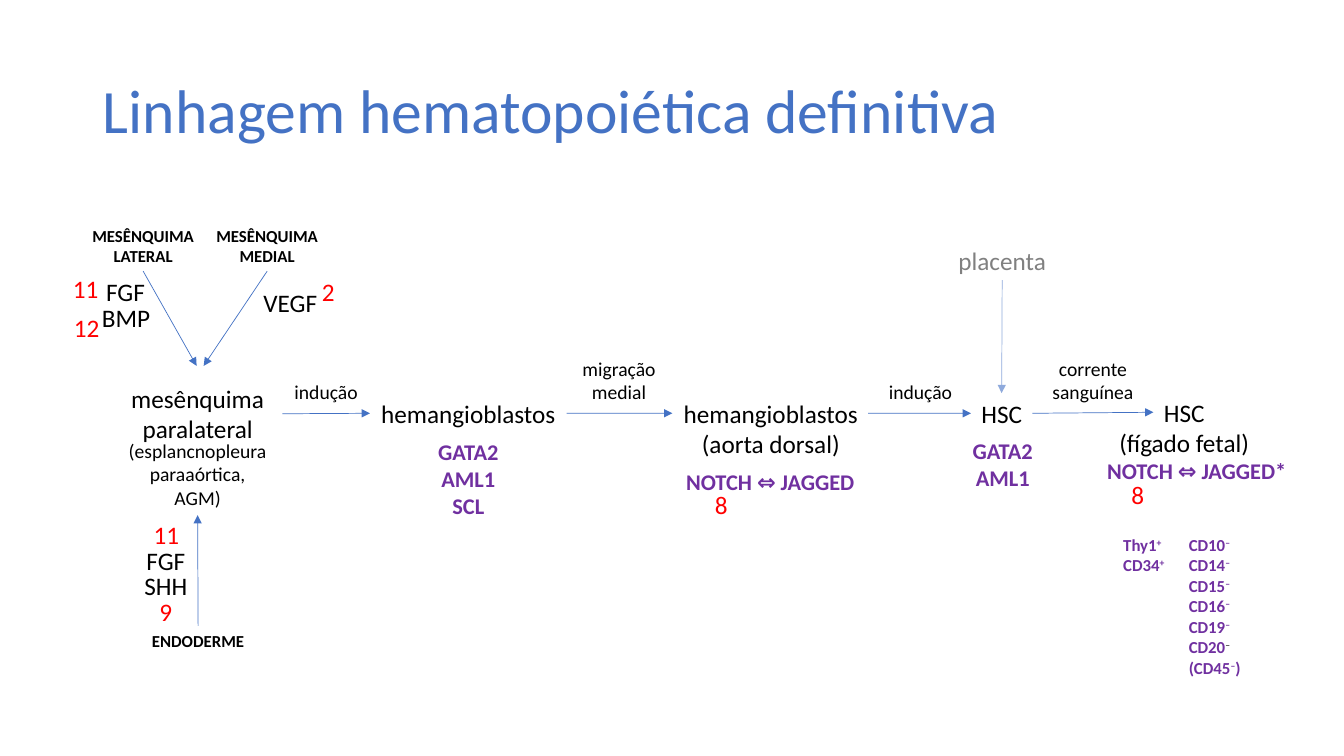
import dataclasses

import lxml.etree
import pptx
import pptx.dml.color
import pptx.enum.shapes
import pptx.enum.text
import pptx.oxml.ns
import pptx.util

Inches = pptx.util.Inches
ALIGN = pptx.enum.text.PP_ALIGN
TOP, LEFT, BOTTOM, RIGHT = range(4)


@dataclasses.dataclass(frozen=True)
class Theme:
    """Font, colours and type sizes of the slide."""
    font: str = "Calibri"
    accent: str = "4472C4"
    pale: str = "8FAADC"
    ink: str = "000000"
    muted: str = "808080"
    gene: str = "7030A0"
    number: str = "FF0000"
    title: int = 44
    body: int = 18
    factor: int = 16
    note: int = 14
    small: int = 12


THEME = Theme()


def rgb(color):
    """Turn a hex string into a colour."""
    return pptx.dml.color.RGBColor.from_string(color)


def style_run(run, size, color, bold=False):
    """Give a run its font, size, colour and weight."""
    run.font.name = THEME.font
    run.font.size = pptx.util.Pt(size)
    run.font.color.rgb = rgb(color)
    run.font.bold = bold


def style_frame(frame, size, color, bold=False, align=ALIGN.CENTER):
    """Format every paragraph and run of a text frame."""
    for paragraph in frame.paragraphs:
        paragraph.alignment = align
        for run in paragraph.runs:
            style_run(run, size, color, bold)


def add_title(slide, text):
    """Place and format the title placeholder."""
    title = slide.shapes.title
    title.left, title.top = Inches(0.92), Inches(0.4)
    title.width, title.height = Inches(11.5), Inches(1.45)
    frame = title.text_frame
    frame.text = text
    frame.auto_size = pptx.enum.text.MSO_AUTO_SIZE.NONE
    frame.vertical_anchor = pptx.enum.text.MSO_ANCHOR.MIDDLE
    style_frame(frame, THEME.title, THEME.accent, align=ALIGN.LEFT)
    frame.paragraphs[0].line_spacing = 0.9


def add_label(slide, text, place, size=THEME.body, color=THEME.ink, bold=False, wrap=False):
    """Add a centred label that grows with its text."""
    label = slide.shapes.add_textbox(*map(Inches, place))
    frame = label.text_frame
    frame.word_wrap = wrap
    frame.auto_size = pptx.enum.text.MSO_AUTO_SIZE.SHAPE_TO_FIT_TEXT
    frame.text = text
    style_frame(frame, size, color, bold)
    return label


def add_tissue(slide, text, place, wrap=True):
    """Add the bold name of a source tissue."""
    return add_label(slide, text, place, THEME.small, bold=True, wrap=wrap)


def add_note(slide, text, place):
    """Add a small wrapped caption."""
    return add_label(slide, text, place, THEME.note, wrap=True)


def add_genes(slide, text, place):
    """Add bold gene names."""
    return add_label(slide, text, place, THEME.factor, THEME.gene, bold=True)


def add_arrow(slide, start, end, color=THEME.accent):
    """Draw an arrow between ends that are points or (label, side) pairs."""
    arrow = slide.shapes.add_connector(
        pptx.enum.shapes.MSO_CONNECTOR.STRAIGHT, 0, 0, 0, 0)
    if isinstance(start[0], float):
        arrow.begin_x, arrow.begin_y = map(Inches, start)
    else:
        arrow.begin_connect(*start)
    if isinstance(end[0], float):
        arrow.end_x, arrow.end_y = map(Inches, end)
    else:
        arrow.end_connect(*end)
    arrow.line.color.rgb = rgb(color)
    arrow.line.width = pptx.util.Pt(0.5)
    qn = pptx.oxml.ns.qn
    lxml.etree.SubElement(arrow.line._get_or_add_ln(), qn("a:tailEnd"), type="triangle")
    lxml.etree.SubElement(arrow._element.spPr, qn("a:effectLst"))


def add_markers(slide, columns, place, widths):
    """Add the table of surface markers with raised signs."""
    table = slide.shapes.add_table(1, len(columns), *map(Inches, place)).table
    table.first_row = table.horz_banding = False
    for index, markers in enumerate(columns):
        table.columns[index].width = Inches(widths[index])
        cell = table.cell(0, index)
        cell.fill.background()
        for row, parts in enumerate(markers):
            frame = cell.text_frame
            paragraph = frame.add_paragraph() if row else frame.paragraphs[0]
            for part in parts:
                run = paragraph.add_run()
                run.text = part
                style_run(run, THEME.small, THEME.gene, bold=True)
                if part in "+–":
                    run.font._element.set("baseline", "30000")
    return table


def main():
    """Build the lineage slide and save it."""
    deck = pptx.Presentation()
    deck.slide_width, deck.slide_height = Inches(13.33), Inches(7.5)
    slide = deck.slides.add_slide(deck.slide_layouts[5])
    add_title(slide, "Linhagem hematopoiética definitiva")

    paralateral = add_label(slide, "mesênquima paralateral", (1.12, 3.75, 1.68, 0.71), wrap=True)
    hemangioblasts = add_label(slide, "hemangioblastos", (3.67, 3.9, 1.95, 0.4))
    add_label(slide, "hemangioblastos\n(aorta dorsal)", (6.67, 3.9, 1.95, 0.71))
    stem_cell = add_label(slide, "HSC", (9.63, 3.9, 0.61, 0.4))
    fetal_stem_cell = add_label(slide, "HSC", (11.44, 3.89, 0.61, 0.4), wrap=True)
    add_label(slide, "(fígado fetal)", (10.99, 4.19, 1.51, 0.4), wrap=True)
    placenta = add_label(slide, "placenta", (9.4, 2.38, 1.08, 0.4), color=THEME.muted)

    endoderm = add_tissue(slide, "ENDODERME", (1.4, 6.21, 1.13, 0.3), wrap=False)
    medial = add_tissue(slide, "MESÊNQUIMA MEDIAL", (2.02, 2.19, 1.26, 0.5))
    lateral = add_tissue(slide, "MESÊNQUIMA LATERAL", (0.56, 2.19, 1.72, 0.5))
    agm = add_note(slide, "(esplancnopleura paraaórtica,\nAGM)", (1.12, 4.3, 1.68, 0.81))

    for factor, left, top, width in (
            ("FGF", 1.35, 5.36, 0.59), ("SHH", 1.33, 5.61, 0.63),
            ("VEGF", 2.51, 2.8, 0.74),
            ("FGF", 0.95, 2.69, 0.59), ("BMP", 0.91, 2.95, 0.68)):
        add_label(slide, factor, (left, top, width, 0.4))

    for number, left, top in (
            ("2", 3.09, 2.69), ("8", 6.99, 4.81), ("9", 1.48, 5.87), ("11", 1.42, 5.1),
            ("11", 0.62, 2.66), ("12", 0.63, 3.05), ("8", 11.12, 4.71)):
        width = 0.2 + 0.13 * len(number)
        add_label(slide, number, (left, top, width, 0.4), color=THEME.number)

    for genes, place in (
            ("GATA2\nAML1\nSCL", (4.24, 4.3, 0.81, 0.91)),
            ("NOTCH ⇔ JAGGED", (6.67, 4.6, 1.94, 0.37)),
            ("GATA2\nAML1", (9.54, 4.29, 0.81, 0.64)),
            ("NOTCH ⇔ JAGGED*", (10.84, 4.49, 2.06, 0.37))):
        add_genes(slide, genes, place)

    for step, place in (
            ("indução", (2.65, 3.72, 1.17, 0.34)),
            ("migração medial", (5.64, 3.49, 1, 0.57)),
            ("indução", (8.71, 3.72, 0.84, 0.34)),
            ("corrente sanguínea", (10.28, 3.49, 1.12, 0.57))):
        add_note(slide, step, place)

    for start, end in (
            ((lateral, BOTTOM), (1.95, 3.63)),
            ((medial, BOTTOM), (2.02, 3.63)),
            ((endoderm, TOP), (agm, BOTTOM)),
            ((paralateral, RIGHT), (hemangioblasts, LEFT)),
            ((hemangioblasts, RIGHT), (6.67, 4.1)),
            ((8.61, 4.1), (stem_cell, LEFT)),
            ((stem_cell, RIGHT), (fetal_stem_cell, LEFT))):
        add_arrow(slide, start, end)
    add_arrow(slide, (placenta, BOTTOM), (stem_cell, TOP), THEME.pale)

    positive = [(name, "+") for name in ("Thy1", "CD34")]
    negative = [(f"CD{number}", "–") for number in (10, 14, 15, 16, 19, 20)]
    negative.append(("(CD45", "–", ")"))
    markers = add_markers(slide, (positive, negative), (11.04, 5.26, 1.4, 1.5), (0.65, 0.75))
    cd20_sign = markers.cell(0, 1).text_frame.paragraphs[5].runs[1]
    style_run(cd20_sign, THEME.small, THEME.ink)

    deck.save("out.pptx")


if __name__ == "__main__":
    main()
